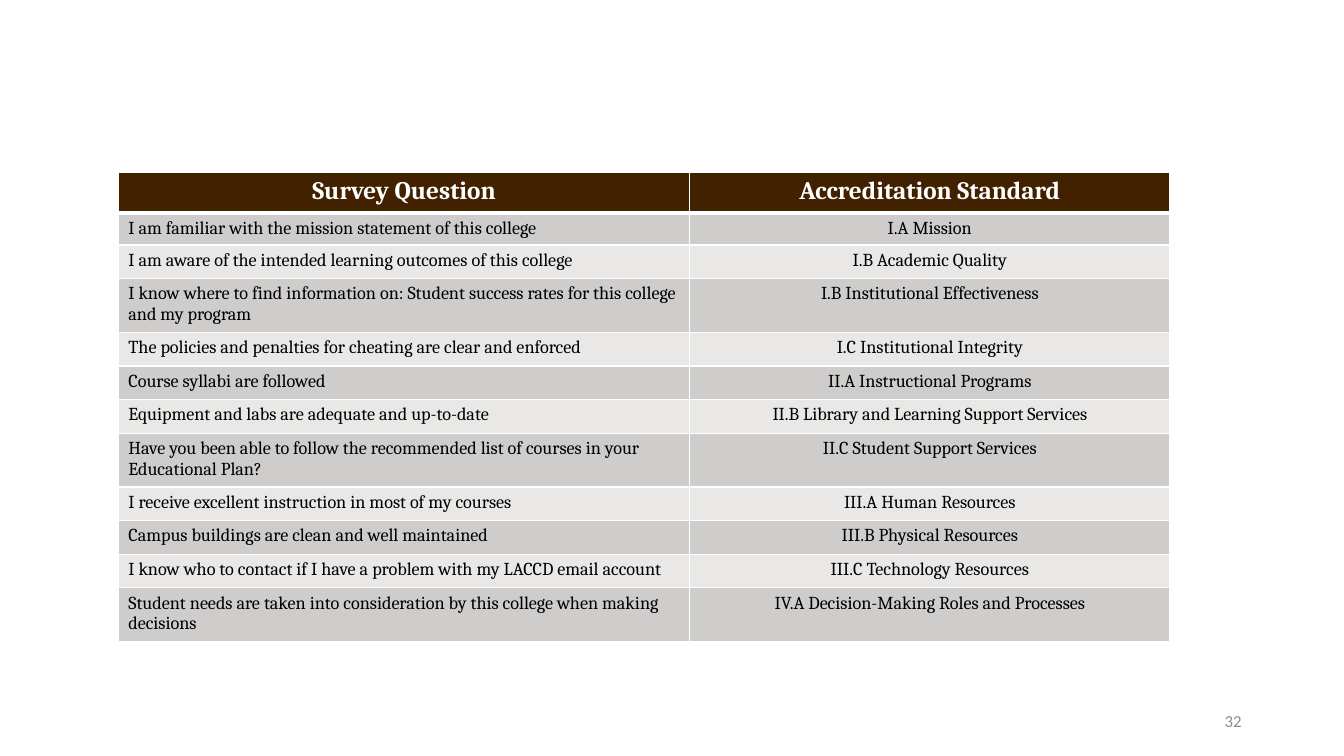
from lxml import etree
from pptx import Presentation
from pptx.dml.color import RGBColor
from pptx.enum.text import MSO_ANCHOR, PP_ALIGN
from pptx.oxml.ns import qn
from pptx.util import Pt

WHITE, BLACK, BROWN, GREY = "FFFFFF", "000000", "422100", "8C8C8C"
BANDS = ("CFCDCC", "E9E8E7")
HEADINGS = ("Survey Question", "Accreditation Standard")
STANDARDS = [
    ("I am familiar with the mission statement of this college", "I.A Mission"),
    ("I am aware of the intended learning outcomes of this college", "I.B Academic Quality"),
    ("I know where to find information on: Student success rates for this college and my program",
     "I.B Institutional Effectiveness"),
    ("The policies and penalties for cheating are clear and enforced", "I.C Institutional Integrity"),
    ("Course syllabi are followed", "II.A Instructional Programs"),
    ("Equipment and labs are adequate and up-to-date", "II.B Library and Learning Support Services"),
    ("Have you been able to follow the recommended list of courses in your Educational Plan?",
     "II.C Student Support Services"),
    ("I receive excellent instruction in most of my courses", "III.A Human Resources"),
    ("Campus buildings are clean and well maintained", "III.B Physical Resources"),
    ("I know who to contact if I have a problem with my LACCD email account",
     "III.C Technology Resources"),
    ("Student needs are taken into consideration by this college when making decisions",
     "IV.A Decision-Making Roles and Processes"),
]
COLUMN_WIDTHS = (408.3, 342.7)
HEADER_HEIGHT, FIRST_HEIGHT, SINGLE_HEIGHT, DOUBLE_HEIGHT = 29.2, 21.6, 24, 29.2
ONE_LINE_LIMIT = 75  # characters that fit on one line of the question column


def rgb(hex_colour):
    return RGBColor.from_string(hex_colour)


def write(frame, text, font, size, colour, align, bold=False):
    paragraph = frame.paragraphs[0]
    paragraph.text = text
    paragraph.alignment = align
    paragraph.font.name = font
    paragraph.font.size = Pt(size)
    paragraph.font.bold = bold
    paragraph.font.color.rgb = rgb(colour)


def set_borders(cell, top, bottom):
    """Draw white borders; must run before the cell is filled."""
    properties = cell._tc.get_or_add_tcPr()
    for side, width in (("lnL", 1), ("lnR", 1), ("lnT", top), ("lnB", bottom)):
        line = etree.SubElement(properties, qn(f"a:{side}"), w=str(Pt(width)))
        fill = etree.SubElement(line, qn("a:solidFill"))
        etree.SubElement(fill, qn("a:srgbClr"), val=WHITE)


def row_height(index, question):
    if index == 0:
        return HEADER_HEIGHT
    if index == 1:
        return FIRST_HEIGHT
    return DOUBLE_HEIGHT if len(question) > ONE_LINE_LIMIT else SINGLE_HEIGHT


def add_standards_table(slide):
    rows = [HEADINGS, *STANDARDS]
    heights = [row_height(index, row[0]) for index, row in enumerate(rows)]
    table = slide.shapes.add_table(len(rows), len(HEADINGS), Pt(84.5), Pt(123),
                                   Pt(sum(COLUMN_WIDTHS)), Pt(sum(heights))).table
    for column, width in zip(table.columns, COLUMN_WIDTHS):
        column.width = Pt(width)
    for index, (row, height) in enumerate(zip(rows, heights)):
        table.rows[index].height = Pt(height)
        is_header = index == 0
        for position, text in enumerate(row):
            cell = table.cell(index, position)
            set_borders(cell, 3 if index == 1 else 1, 3 if is_header else 1)
            cell.fill.solid()
            cell.fill.fore_color.rgb = rgb(BROWN if is_header else BANDS[(index - 1) % 2])
            centred = is_header or position == 1
            write(cell.text_frame, text, "Cambria", 18 if is_header else 13,
                  WHITE if is_header else BLACK,
                  PP_ALIGN.CENTER if centred else PP_ALIGN.LEFT, is_header)


def add_page_number(slide, number):
    frame = slide.shapes.add_textbox(Pt(678), Pt(500.5), Pt(216), Pt(28.8)).text_frame
    frame.word_wrap = True
    frame.vertical_anchor = MSO_ANCHOR.MIDDLE
    write(frame, number, "Calibri", 12, GREY, PP_ALIGN.RIGHT)


def main():
    presentation = Presentation()
    presentation.slide_width, presentation.slide_height = Pt(960), Pt(540)
    slide = presentation.slides.add_slide(presentation.slide_layouts[6])
    add_page_number(slide, "32")
    add_standards_table(slide)
    presentation.save("out.pptx")


if __name__ == "__main__":
    main()
